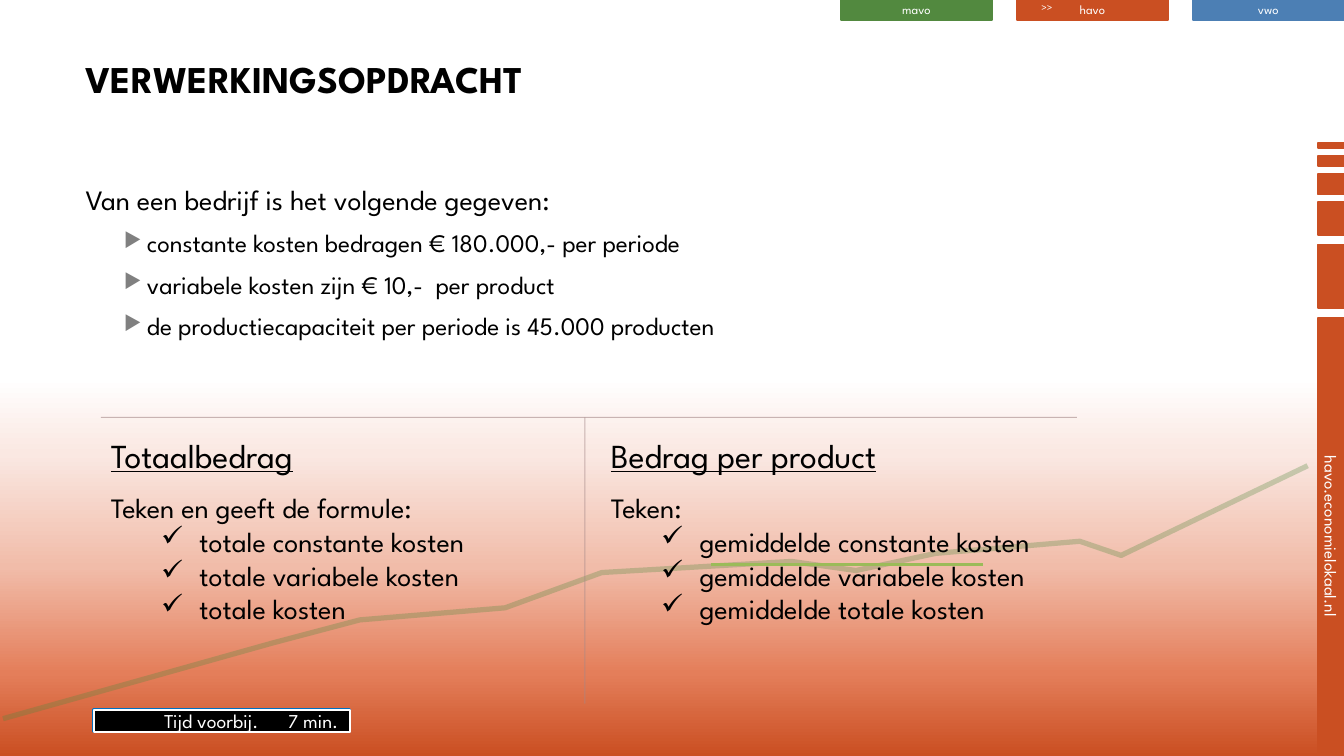
from pptx import Presentation
from pptx.dml.color import RGBColor
from pptx.enum.shapes import MSO_CONNECTOR, MSO_SHAPE
from pptx.enum.text import MSO_ANCHOR, MSO_AUTO_SIZE, PP_ALIGN
from pptx.oxml.ns import qn
from pptx.util import Inches, Pt
from lxml.etree import SubElement

COLORS = {
    "orange": "CA4F22", "green": "52893F", "blue": "4C7FB4", "lime": "9BBB59",
    "rule": "A58989", "bullet": "808080", "black": "000000", "white": "FFFFFF",
    "timer": "760603", "timer_edge": "0070C0",
}
BACKGROUND = [(0, "CA4F22"), (11, "E47E5A"), (25, "F1BCA9"), (40, "FAE8E2"), (50, "FFFFFF")]


def rgb(name):
    return RGBColor.from_string(COLORS[name])


class SlideBuilder:
    font = "League Spartan"

    def __init__(self, slide):
        self.s = slide

    def background(self, stops):
        fill = self.s.background.fill
        fill.gradient()
        fill.gradient_angle = 90
        stop_list = self.s._element.find(".//" + qn("a:gsLst"))
        for stop in list(stop_list):
            stop_list.remove(stop)
        for pos, color in stops:
            gs = SubElement(stop_list, qn("a:gs"), pos=str(pos * 1000))
            SubElement(gs, qn("a:srgbClr"), val=color)

    def stroke(self, line, color, width, alpha=None):
        line.color.rgb = rgb(color)
        line.width = Pt(width)
        if alpha:
            clr = line._ln.find(".//" + qn("a:srgbClr"))
            SubElement(clr, qn("a:alpha"), val=str(alpha * 1000))

    def run(self, p, text, size, color="black", bold=None, underline=None):
        r = p.add_run()
        r.text = text
        r.font.name = self.font
        r.font.size = Pt(size)
        r.font.color.rgb = rgb(color)
        r.font.bold = bold
        r.font.underline = underline

    def box(self, x, y, w, h, fill, edge, width=1.25, text=None, size=9, rotation=0):
        sp = self.s.shapes.add_shape(
            MSO_SHAPE.RECTANGLE, Inches(x), Inches(y), Inches(w), Inches(h))
        sp.shadow.inherit = False
        sp.rotation = rotation
        sp.fill.solid()
        sp.fill.fore_color.rgb = rgb(fill)
        self.stroke(sp.line, edge, width)
        if text:
            tf = sp.text_frame
            tf.margin_top, tf.margin_bottom = 0, Inches(0.01)
            tf.vertical_anchor = MSO_ANCHOR.MIDDLE
            p = tf.paragraphs[0]
            p.alignment = PP_ALIGN.CENTER
            self.run(p, text, size, "white")

    def text(self, x, y, w, h, text, size, wrap=True, grow=True, **style):
        tb = self.s.shapes.add_textbox(Inches(x), Inches(y), Inches(w), Inches(h))
        tf = tb.text_frame
        tf.word_wrap = wrap
        tf.auto_size = MSO_AUTO_SIZE.SHAPE_TO_FIT_TEXT if grow else MSO_AUTO_SIZE.NONE
        self.run(tf.paragraphs[0], text, size, **style)
        return tf

    def bullets(self, tf, items, size, char, left, hang, color=None, scale=None,
                before=0, after=0):
        for item in items:
            p = tf.add_paragraph()
            p.level = 1
            p.space_before, p.space_after = Pt(before), Pt(after)
            pPr = p._p.get_or_add_pPr()
            pPr.set("marL", str(Inches(left)))
            pPr.set("indent", str(-Inches(hang)))
            if color:
                clr = SubElement(pPr, qn("a:buClr"))
                SubElement(clr, qn("a:srgbClr"), val=COLORS[color])
            if scale:
                SubElement(pPr, qn("a:buSzPct"), val=str(scale * 1000))
            SubElement(pPr, qn("a:buChar"), char=char)
            self.run(p, item, size)

    def line(self, x1, y1, x2, y2, color, width, alpha=None):
        cx = self.s.shapes.add_connector(
            MSO_CONNECTOR.STRAIGHT, Inches(x1), Inches(y1), Inches(x2), Inches(y2))
        self.stroke(cx.line, color, width, alpha)
        SubElement(cx._element.spPr, qn("a:effectLst"))

    def polyline(self, points, color, width, alpha):
        pts = [(Inches(x), Inches(y)) for x, y in points]
        fb = self.s.shapes.build_freeform(*pts[0])
        fb.add_line_segments(pts[1:], close=False)
        sp = fb.convert_to_shape()
        sp.shadow.inherit = False
        sp.fill.background()
        self.stroke(sp.line, color, width, alpha)


def main():
    prs = Presentation()
    prs.slide_width, prs.slide_height = Inches(13.33), Inches(7.5)
    b = SlideBuilder(prs.slides.add_slide(prs.slide_layouts[6]))
    b.background(BACKGROUND)

    levels = [("mavo", "green"), ("havo", "orange"), ("vwo", "blue")]
    for i, (level, color) in enumerate(levels):
        b.box(8.34 + i * 1.745, 0, 1.5, 0.2, color, color, text=level)

    sidebar = [(5.32, 4.33, "havo.economielokaal.nl"), (2.74, 0.63, None),
               (2.17, 0.33, None), (1.83, 0.2, None), (1.6, 0.1, None), (1.44, 0.05, None)]
    for middle, length, label in sidebar:
        b.box(13.2 - length / 2, middle - 0.13, length, 0.26, "orange", "orange",
              text=label, size=12, rotation=90)

    trend = [(12.97, 4.62), (11.12, 5.51), (10.71, 5.37), (9.28, 5.49), (8.49, 5.66),
             (7.85, 5.57), (5.97, 5.68), (5.01, 6.03), (3.57, 6.15), (2.7, 6.38),
             (0.03, 7.13)]
    b.polyline(trend, "green", 3.75, 30)
    b.text(10.23, -0.04, 0.33, 0.23, ">>", 7.5, wrap=False, color="white")

    b.text(0.75, 0.5, 10.03, 0.89, "VERWERKINGSOPDRACHT", 27, grow=False, bold=True)
    tf = b.text(0.75, 1.76, 11.44, 5.14, "Van een bedrijf is het volgende gegeven:", 20,
                grow=False)
    tf.paragraphs[0].space_after = Pt(4.5)
    facts = ["constante kosten bedragen € 180.000,- per periode",
             "variabele kosten zijn € 10,-  per product",
             "de productiecapaciteit per periode is 45.000 producten"]
    b.bullets(tf, facts, 18, "▶", 0.61, 0.23, "bullet", 80, before=3.6, after=4.5)

    b.line(5.8, 4.14, 5.8, 6.98, "rule", 0.75, 60)
    b.line(10.68, 4.14, 1, 4.14, "rule", 0.75, 60)

    columns = [
        (1, 5.11, "Totaalbedrag", "Teken en geeft de formule:",
         ["totale constante kosten", "totale variabele kosten", "totale kosten"]),
        (5.96, 5.2, "Bedrag per product", "Teken:",
         ["gemiddelde constante kosten", "gemiddelde variabele kosten",
          "gemiddelde totale kosten"]),
    ]
    for x, width, heading, task, items in columns:
        b.text(x, 4.27, 5.11, 0.5, heading, 24, underline=True)
        tf = b.text(x, 4.82, width, 1.45, task, 20)
        b.bullets(tf, items, 20, "✓", 0.88, 0.38)
    b.line(7.05, 5.6, 9.75, 5.6, "lime", 2.25)

    for fill, edge, width in [("timer", "timer_edge", 2.25), ("black", "white", 1.25)]:
        b.box(0.93, 7.04, 2.54, 0.22, fill, edge, width)
    for x, width, label in [(2.76, 0.76, "7 min."), (1.53, 1.25, "Tijd voorbij.")]:
        b.text(x, 6.98, width, 0.34, label, 14, wrap=False, color="white")

    prs.save("out.pptx")


if __name__ == "__main__":
    main()
